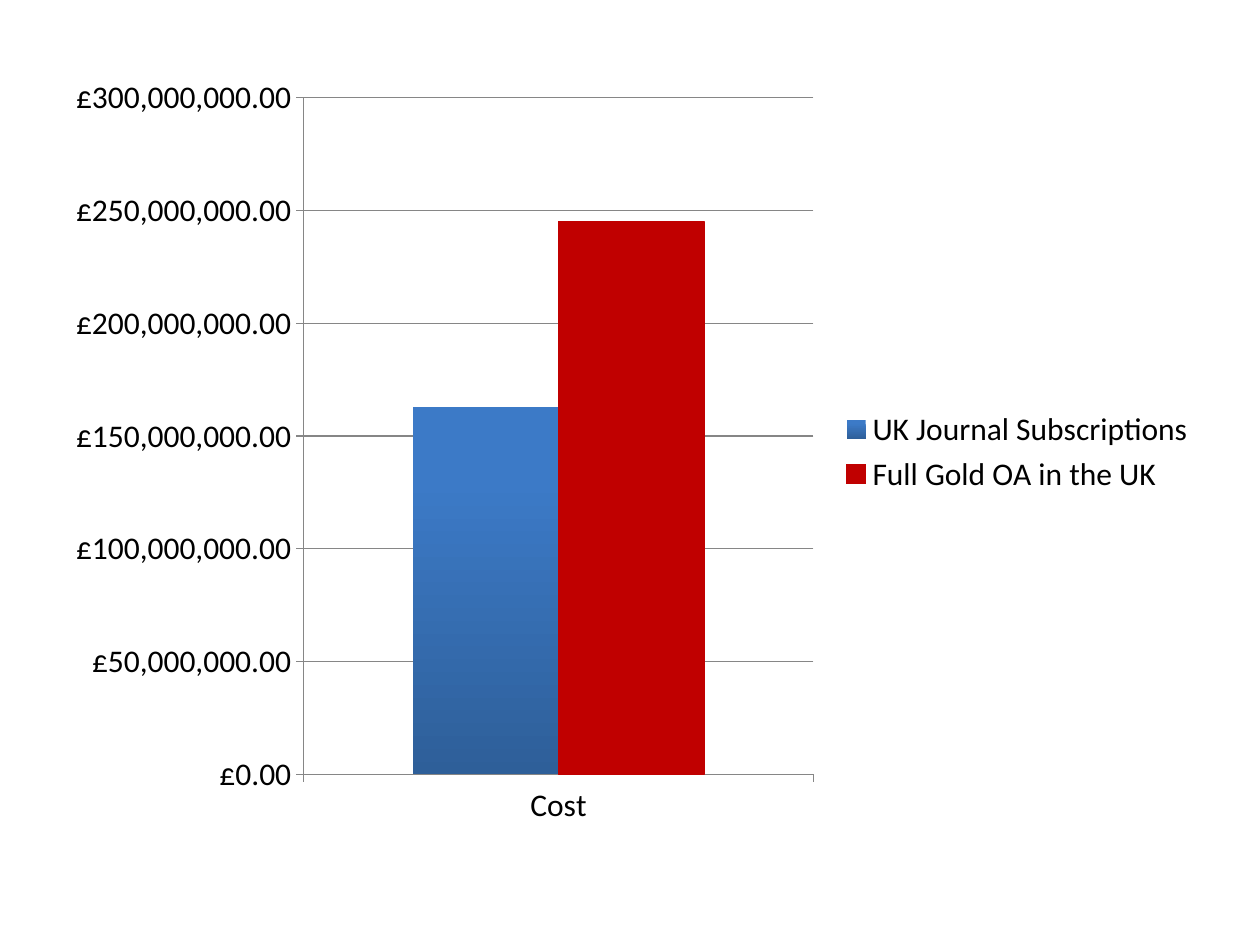
from pptx import Presentation
from pptx.chart.data import CategoryChartData
from pptx.dml.color import RGBColor
from pptx.enum.chart import XL_CHART_TYPE, XL_LEGEND_POSITION, XL_TICK_MARK
from pptx.util import Inches, Pt

# Content
CATEGORIES = ["Cost"]
SERIES = [("UK Journal Subscriptions", [163_000_000]),
          ("Full Gold OA in the UK", [245_000_000])]
POUNDS = "[$£-809]#,##0.00"
COLORS = {"text": "000000", "axis": "868686", "blue_top": "3C7AC7",
          "blue_bottom": "2E5F99", "gold_oa": "C00000"}


def rgb(name):
    return RGBColor.from_string(COLORS[name])


prs = Presentation()
prs.slide_width, prs.slide_height = Inches(10), Inches(7.5)
s = prs.slides.add_slide(prs.slide_layouts[6])

# Cost comparison chart
data = CategoryChartData(number_format=POUNDS)
data.categories = CATEGORIES
for name, values in SERIES:
    data.add_series(name, values)
chart = s.shapes.add_chart(XL_CHART_TYPE.COLUMN_CLUSTERED, Inches(0.42), Inches(0.5),
                           Inches(9.17), Inches(6.17), data).chart
chart.has_title = False
chart.font.name = "Calibri"
chart.font.size = Pt(18)
chart.font.color.rgb = rgb("text")

# Legend
chart.has_legend = True
chart.legend.position = XL_LEGEND_POSITION.RIGHT
chart.legend.include_in_layout = False

# Axes and gridlines
cost_axis = chart.value_axis
cost_axis.minimum_scale, cost_axis.maximum_scale = 0, 300_000_000
cost_axis.major_unit = 50_000_000
cost_axis.has_major_gridlines = True
cost_axis.tick_labels.number_format = POUNDS
cost_axis.tick_labels.number_format_is_linked = False
for axis in (chart.category_axis, cost_axis):
    axis.major_tick_mark = XL_TICK_MARK.OUTSIDE
    axis.minor_tick_mark = XL_TICK_MARK.NONE
for part in (chart.category_axis, cost_axis, cost_axis.major_gridlines):
    part.format.line.color.rgb = rgb("axis")
    part.format.line.width = Pt(0.75)

# Columns
plot = chart.plots[0]
plot.gap_width = 150
plot.overlap = 0
plot.vary_by_categories = False
subscriptions, gold_oa = plot.series

fill = subscriptions.format.fill
fill.gradient()
fill.gradient_angle = 270
for stop, position, color in zip(fill.gradient_stops, (0.2, 1), ("blue_top", "blue_bottom")):
    stop.position = position
    stop.color.rgb = rgb(color)
subscriptions.format.line.fill.background()

gold_oa.format.fill.solid()
gold_oa.format.fill.fore_color.rgb = rgb("gold_oa")
gold_oa.format.line.color.rgb = rgb("gold_oa")
gold_oa.format.line.width = Pt(0.75)

prs.save("out.pptx")
